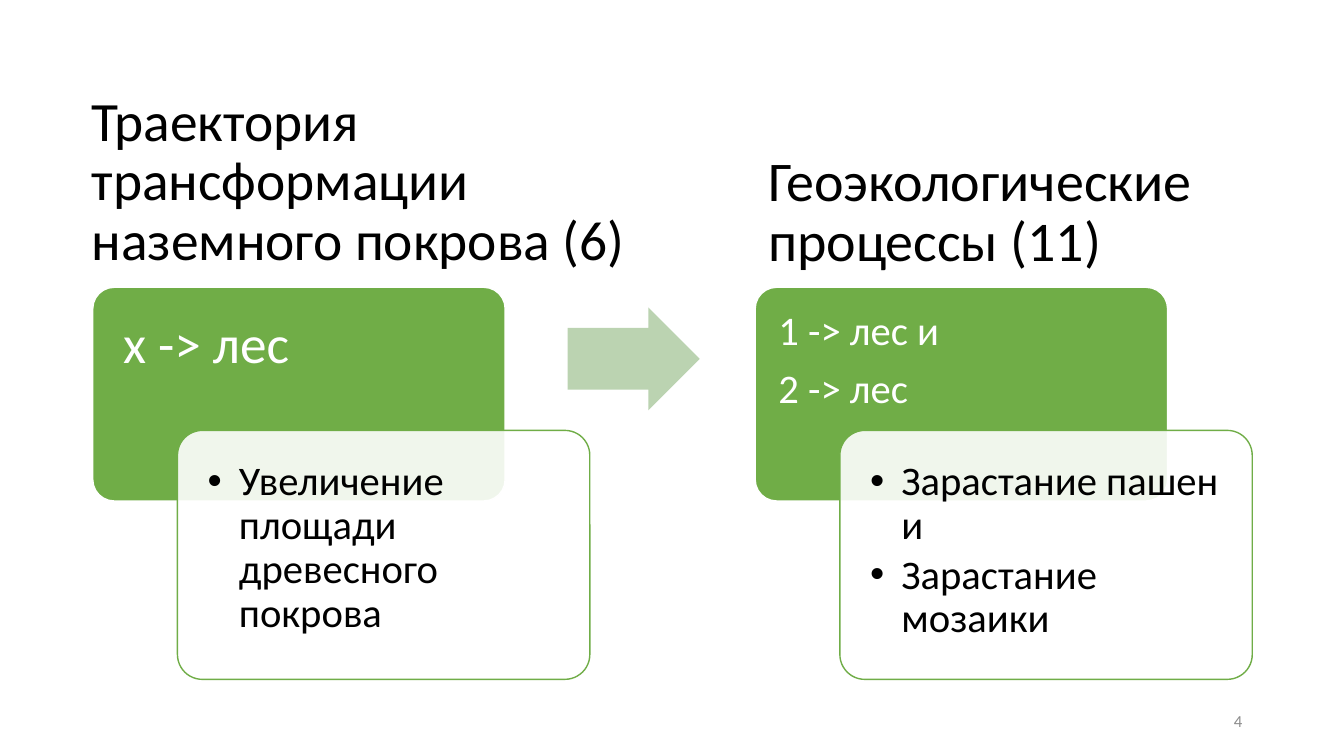
from dataclasses import dataclass

from lxml import etree
from pptx import Presentation
from pptx.dml.color import RGBColor
from pptx.enum.shapes import MSO_SHAPE as SHAPE
from pptx.enum.text import MSO_ANCHOR as ANCHOR, MSO_AUTO_SIZE as AUTO_SIZE, PP_ALIGN as ALIGN
from pptx.oxml.ns import qn
from pptx.util import Inches, Pt


@dataclass(frozen=True)
class Theme:
    font: str = "Calibri"
    ink: str = "000000"
    white: str = "FFFFFF"
    green: str = "70AD47"
    pale_green: str = "BBD3B1"
    grey: str = "8C8C8C"
    title_size: float = 39.6
    heading_size: float = 40
    lead_size: float = 38
    body_size: float = 29
    number_size: float = 12


THEME = Theme()
CARD_WIDTH = 4.09
CARD_TOP = 2.85
STEP_LEFTS = (0.92, 7.49)


def write(frame, lines, size, color, insets=(0.1, 0.05, 0.1, 0.05), anchor=ANCHOR.TOP,
          align=ALIGN.LEFT, spacing=0.9, after=0, bullets=False):
    """Fill a text frame with one paragraph per line."""
    frame.word_wrap = True
    frame.auto_size = AUTO_SIZE.NONE
    frame.vertical_anchor = anchor
    (frame.margin_left, frame.margin_top,
     frame.margin_right, frame.margin_bottom) = map(Inches, insets)
    for index, line in enumerate(lines):
        paragraph = frame.add_paragraph() if index else frame.paragraphs[0]
        paragraph.alignment = align
        paragraph.line_spacing = spacing
        paragraph.space_before = Pt(0)
        paragraph.space_after = Pt(after)
        if bullets:
            add_bullet(paragraph)
        run = paragraph.add_run()
        run.text = line
        run.font.name = THEME.font
        run.font.size = Pt(size)
        run.font.color.rgb = RGBColor.from_string(color)


def add_bullet(paragraph, indent=0.31):
    properties = paragraph._p.get_or_add_pPr()
    properties.set("marL", str(Inches(indent)))
    properties.set("indent", str(-Inches(indent)))
    etree.SubElement(properties, qn("a:buFont")).set("typeface", "Arial")
    etree.SubElement(properties, qn("a:buChar")).set("char", "•")


def add_label(slide, box, lines, size, color, **options):
    label = slide.shapes.add_textbox(*map(Inches, box))
    write(label.text_frame, lines, size, color, **options)


def add_block(slide, kind, box, adjustments, fill, line=None, opacity=None):
    block = slide.shapes.add_shape(kind, *map(Inches, box))
    block.shadow.inherit = False
    for index, value in enumerate(adjustments):
        block.adjustments[index] = value
    block.fill.solid()
    block.fill.fore_color.rgb = RGBColor.from_string(fill)
    if opacity is not None:
        color = block.fill._xPr.find(qn("a:solidFill"))[0]
        etree.SubElement(color, qn("a:alpha")).set("val", str(opacity * 1000))
    if line:
        block.line.color.rgb = RGBColor.from_string(line)
        block.line.width = Pt(1)
    else:
        block.line.fill.background()


def add_step(slide, left, lead, lead_size, lead_inset, details):
    """Green card with a lead, overlapped by a translucent card of bullets."""
    add_block(slide, SHAPE.ROUNDED_RECTANGLE, (left, CARD_TOP, CARD_WIDTH, 2.12), [0.1],
              THEME.green, THEME.white)
    add_label(slide, (left, CARD_TOP, CARD_WIDTH, 1.42), lead, lead_size, THEME.white,
              insets=(lead_inset, lead_inset, lead_inset, lead_inset / 2), after=10)

    detail_left, detail_top, pad = left + 0.84, CARD_TOP + 1.42, 0.07
    add_block(slide, SHAPE.ROUNDED_RECTANGLE, (detail_left, detail_top, CARD_WIDTH, 2.47),
              [0.1], THEME.white, THEME.green, opacity=90)
    add_label(slide, (detail_left + pad, detail_top + pad, CARD_WIDTH - 2 * pad, 2.33),
              details, THEME.body_size, THEME.ink, insets=(0.23,) * 4, after=4, bullets=True)


def add_title(slide, box, text):
    title = slide.shapes.title
    title.left, title.top, title.width, title.height = map(Inches, box)
    write(title.text_frame, [text], THEME.title_size, THEME.ink, anchor=ANCHOR.MIDDLE)


def main():
    deck = Presentation()
    deck.slide_width, deck.slide_height = Inches(13.33), Inches(7.5)
    slide = deck.slides.add_slide(deck.slide_layouts[5])

    # Column headings
    add_title(slide, (0.81, 1.09, 5.63, 1.45), "Траектория трансформации наземного покрова (6)")
    add_label(slide, (7.52, 1.39, 5.68, 1.45), ["Геоэкологические процессы (11)"],
              THEME.heading_size, THEME.ink, anchor=ANCHOR.MIDDLE)

    # Trajectory leading to processes
    trajectory_left, process_left = STEP_LEFTS
    add_step(slide, trajectory_left, ["х -> лес"], THEME.lead_size, 0.3,
             ["Увеличение площади древесного покрова"])
    add_block(slide, SHAPE.RIGHT_ARROW, (5.63, 3.05, 1.31, 1.02), [0.6, 0.5], THEME.pale_green)
    add_step(slide, process_left, ["1 -> лес и", "2 -> лес"], THEME.body_size, 0.23,
             ["Зарастание пашен и", "Зарастание мозаики"])

    # Slide number
    add_label(slide, (9.42, 6.95, 3, 0.4), ["4"], THEME.number_size, THEME.grey,
              anchor=ANCHOR.MIDDLE, align=ALIGN.RIGHT, spacing=1.0)

    deck.save("out.pptx")


if __name__ == "__main__":
    main()
